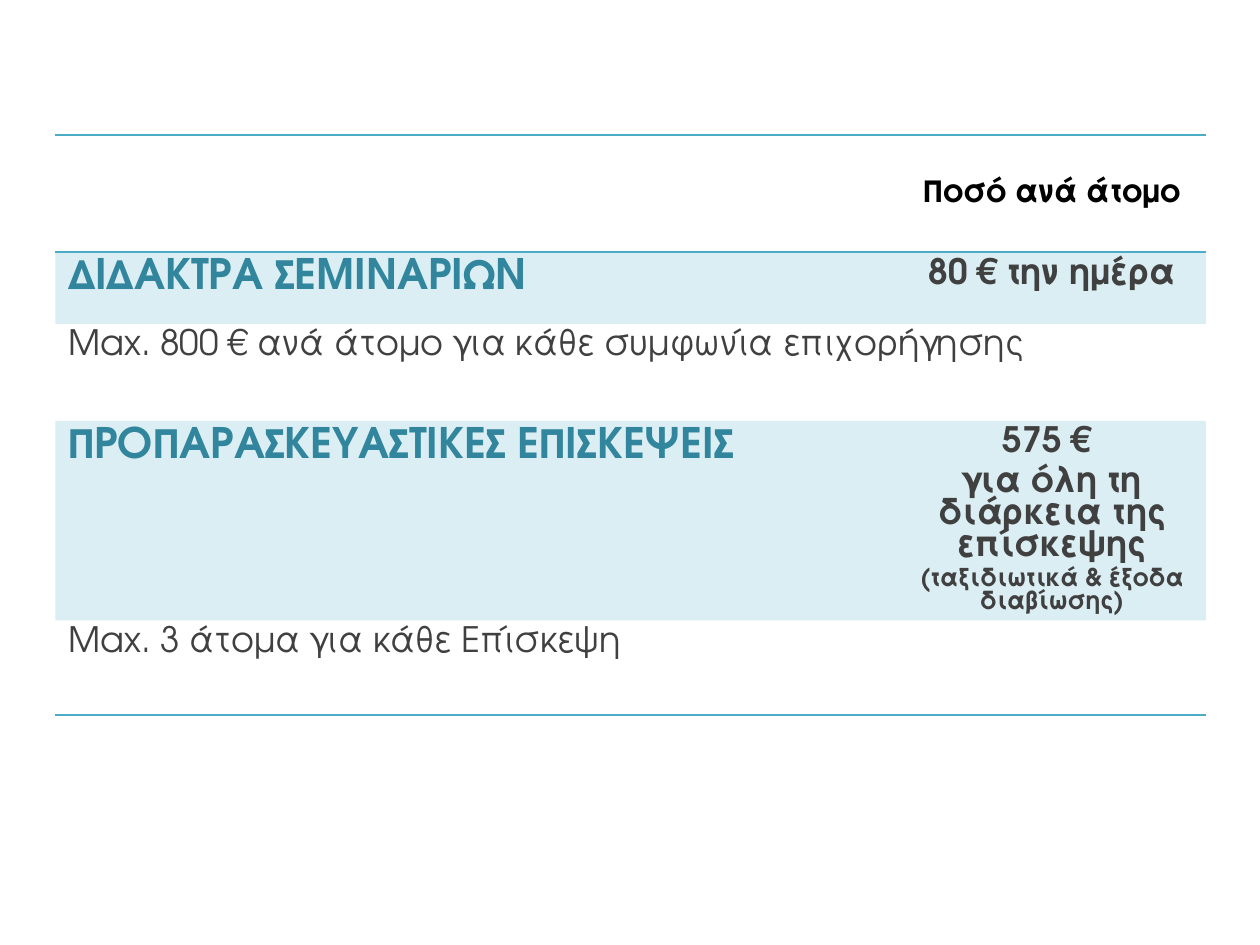
"""Build a slide with a table of seminar and visit grants per person."""
from lxml import etree
from pptx import Presentation
from pptx.dml.color import RGBColor
from pptx.enum import text
from pptx.oxml import ns
from pptx.util import Inches, Pt

FONT = "TeX Gyre Adventor"
BLACK = RGBColor(0x00, 0x00, 0x00)
GREY = RGBColor(0x40, 0x40, 0x40)
TEAL = RGBColor(0x31, 0x85, 0x9C)
AQUA = RGBColor(0x4B, 0xAC, 0xC6)
NO_STYLE = "{2D5ABB26-0587-4C30-8999-92F81FD0307C}"


def write(cell, lines, size, color, bold=True, centered=False):
    frame = cell.text_frame
    frame.text = "\n".join(lines)
    for paragraph in frame.paragraphs:
        paragraph.alignment = text.PP_ALIGN.CENTER if centered else text.PP_ALIGN.LEFT
        paragraph.font.name = FONT
        paragraph.font.size = Pt(size)
        paragraph.font.bold = bold
        paragraph.font.color.rgb = color
    for paragraph in frame.paragraphs[1:]:
        paragraph.space_before = Pt(4)


def add_border(cell, side):
    line = etree.Element(ns.qn(f"a:{side}"), w=str(Pt(1)))
    fill = etree.SubElement(line, ns.qn("a:solidFill"))
    etree.SubElement(fill, ns.qn("a:srgbClr"), val=str(AQUA))
    properties = cell._tc.get_or_add_tcPr()
    properties.insert(len(properties.findall(ns.qn("a:lnT"))), line)


presentation = Presentation()
presentation.slide_width, presentation.slide_height = Inches(10), Inches(7.5)
slide = presentation.slides.add_slide(presentation.slide_layouts[6])

widths = [6.69, 2.44]
heights = [0.93, 0.57, 0.77, 1.57, 0.75]
shape = slide.shapes.add_table(
    len(heights), len(widths), Inches(0.44), Inches(1.07), Inches(sum(widths)), Inches(sum(heights))
)
table = shape.table
table._tbl.tblPr.find(ns.qn("a:tableStyleId")).text = NO_STYLE
table.horz_banding = False
for column, width in zip(table.columns, widths):
    column.width = Inches(width)
for row, height in zip(table.rows, heights):
    row.height = Inches(height)

for row_index, row in enumerate(table.rows):
    for cell in row.cells:
        if row_index in (1, 3):
            cell.fill.solid()
            cell.fill.fore_color.rgb = AQUA
            color = cell._tc.tcPr.find(".//" + ns.qn("a:srgbClr"))
            etree.SubElement(color, ns.qn("a:alpha"), val="20000")
        else:
            cell.fill.background()
        if row_index == 0:
            add_border(cell, "lnT")
        if row_index in (0, 4):
            add_border(cell, "lnB")

table.cell(2, 0).merge(table.cell(2, 1))

table.cell(0, 1).vertical_anchor = text.MSO_ANCHOR.MIDDLE
write(table.cell(0, 1), ["Ποσό ανά άτομο"], 18, BLACK, centered=True)

for row_index, heading in [(1, "ΔΙΔΑΚΤΡΑ ΣΕΜΙΝΑΡΙΩΝ"), (3, "ΠΡΟΠΑΡΑΣΚΕΥΑΣΤΙΚΕΣ ΕΠΙΣΚΕΨΕΙΣ")]:
    write(table.cell(row_index, 0), [heading], 24, TEAL)

for row_index, limit in [
    (2, "Max. 800 € ανά άτομο για κάθε συμφωνία επιχορήγησης"),
    (4, "Max. 3 άτομα για κάθε Επίσκεψη"),
]:
    write(table.cell(row_index, 0), [limit], 20, GREY, bold=False)

visit_amount = ["575 € ", "για όλη τη διάρκεια της επίσκεψης", "(ταξιδιωτικά & έξοδα διαβίωσης)"]
for row_index, amount in [(1, ["80 € την ημέρα"]), (3, visit_amount)]:
    write(table.cell(row_index, 1), amount, 20, GREY, centered=True)

note = table.cell(3, 1).text_frame.paragraphs[-1]
note.font.size = Pt(14)
note.space_before = Pt(3)

presentation.save("out.pptx")
